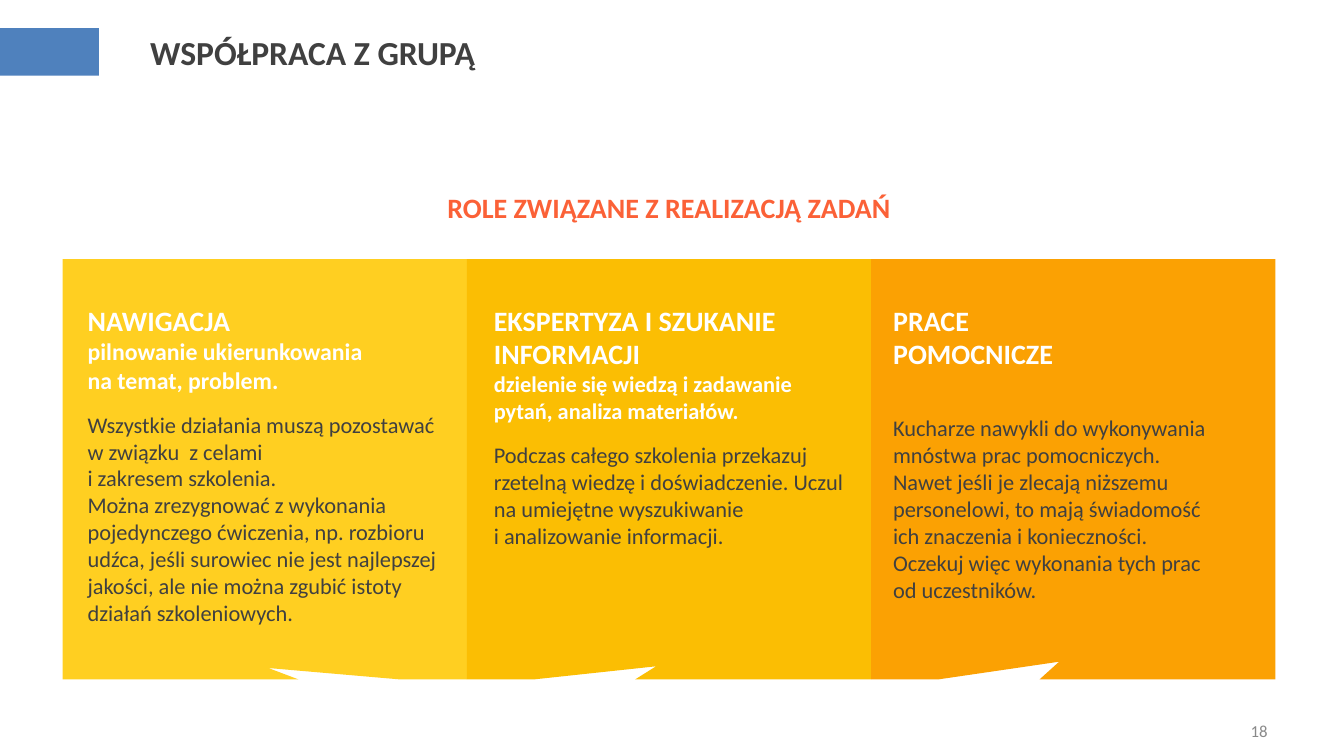
from copy import deepcopy

from pptx import Presentation
from pptx.dml.color import RGBColor
from pptx.enum.shapes import MSO_SHAPE
from pptx.enum.text import MSO_ANCHOR, PP_ALIGN
from pptx.util import Inches, Pt

CALLOUT = MSO_SHAPE.RECTANGULAR_CALLOUT
RECTANGLE = MSO_SHAPE.RECTANGLE
TOP, MIDDLE = MSO_ANCHOR.TOP, MSO_ANCHOR.MIDDLE
LEFT, CENTER, RIGHT = PP_ALIGN.LEFT, PP_ALIGN.CENTER, PP_ALIGN.RIGHT

FONT = "Calibri"
WHITE = RGBColor(0xFF, 0xFF, 0xFF)
DARK = RGBColor(0x40, 0x40, 0x40)
GRAY = RGBColor(0x89, 0x89, 0x89)
BLUE = RGBColor(0x4F, 0x81, 0xBD)
CORAL = RGBColor(0xFB, 0x61, 0x37)
YELLOW = RGBColor(0xFF, 0xCF, 0x21)
AMBER = RGBColor(0xFB, 0xBE, 0x03)
ORANGE = RGBColor(0xFB, 0xA1, 0x03)

CARDS_LEFT, CARDS_TOP = 0.62, 2.57
CARD_WIDTH, CARD_HEIGHT = 4.01, 4.17

# Each role: fill, callout tip, text inset, text width, heading,
# summary, summary size, space after the heading, description
ROLES = [
    (YELLOW, (0.009, 0.473), 0.15, 3.72, "NAWIGACJA",
     "pilnowanie ukierunkowania \nna temat, problem.", 17, 12,
     "Wszystkie działania muszą pozostawać w związku  z celami \n"
     "i zakresem szkolenia. \n"
     "Można zrezygnować z wykonania pojedynczego ćwiczenia, np. rozbioru "
     "udźca, jeśli surowiec nie jest najlepszej jakości, ale nie można "
     "zgubić istoty działań szkoleniowych."),
    (AMBER, (-0.032, 0.469), 0.17, 3.67, "EKSPERTYZA I SZUKANIE INFORMACJI",
     "dzielenie się wiedzą i zadawanie pytań, analiza materiałów.", 16, 12,
     "Podczas całego szkolenia przekazuj rzetelną wiedzę i doświadczenie. "
     "Uczul na umiejętne wyszukiwanie \ni analizowanie informacji."),
    (ORANGE, (-0.035, 0.458), 0.12, 3.77, "PRACE\nPOMOCNICZE", "", 16, 31.5,
     "Kucharze nawykli do wykonywania mnóstwa prac pomocniczych. \n"
     "Nawet jeśli je zlecają niższemu personelowi, to mają świadomość \n"
     "ich znaczenia i konieczności. \n"
     "Oczekuj więc wykonania tych prac \nod uczestników."),
]


def add_block(slide, shape_type, box, fill):
    block = slide.shapes.add_shape(shape_type, *map(Inches, box))
    block.shadow.inherit = False
    block.fill.solid()
    block.fill.fore_color.rgb = fill
    block.line.fill.background()
    return block


def add_text_box(slide, box, anchor=TOP):
    text_frame = slide.shapes.add_textbox(*map(Inches, box)).text_frame
    text_frame.word_wrap = True
    text_frame.vertical_anchor = anchor
    return text_frame


def add_lines(paragraph, text, size, color, bold):
    """Append text, with line breaks as tall as the lines they end."""
    for index, line in enumerate(text.split("\n")):
        if index:
            add_break(paragraph)
        run = paragraph.add_run()
        run.text = line
        run.font.name = FONT
        run.font.size = Pt(size)
        run.font.bold = bold
        run.font.color.rgb = color


def add_break(paragraph):
    """Break the line, keeping the format of the last run."""
    properties = deepcopy(paragraph.runs[-1]._r.rPr)
    paragraph.add_line_break()
    paragraph._p[-1].append(properties)


def add_label(slide, box, text, size, color, bold, alignment, anchor=TOP):
    paragraph = add_text_box(slide, box, anchor).paragraphs[0]
    paragraph.alignment = alignment
    add_lines(paragraph, text, size, color, bold)


def add_role_card(slide, left, top, role):
    fill, tip, inset, width, heading, summary, size, gap, description = role
    card = add_block(slide, CALLOUT, (left, top, CARD_WIDTH, CARD_HEIGHT), fill)
    card.adjustments[0], card.adjustments[1] = tip

    text_frame = add_text_box(slide, (left + inset, top + 0.39, width, 3.33))
    title = text_frame.paragraphs[0]
    title.space_after = Pt(gap)
    add_lines(title, heading, 20, WHITE, True)
    if summary:
        add_break(title)
        add_lines(title, summary, size, WHITE, True)
    add_lines(text_frame.add_paragraph(), description, 16, DARK, False)


def add_header(slide, top):
    add_block(slide, RECTANGLE, (0, top, 0.98, 0.47), BLUE)
    add_label(slide, (1.39, top - 0.07, 5.99, 0.62), "WSPÓŁPRACA Z GRUPĄ",
              24, DARK, True, LEFT, MIDDLE)


def main():
    presentation = Presentation()
    presentation.slide_width = Inches(13.33)
    presentation.slide_height = Inches(7.5)
    slide = presentation.slides.add_slide(presentation.slide_layouts[6])

    add_header(slide, 0.28)
    add_label(slide, (CARDS_LEFT, 1.84, 3 * CARD_WIDTH, 0.44),
              "ROLE ZWIĄZANE Z REALIZACJĄ ZADAŃ", 20, CORAL, True, CENTER)
    for column, role in enumerate(ROLES):
        add_role_card(slide, CARDS_LEFT + column * CARD_WIDTH, CARDS_TOP, role)
    add_label(slide, (9.56, 7.05, 3.11, 0.4), "18", 12, GRAY, False, RIGHT, MIDDLE)

    presentation.save("out.pptx")


if __name__ == "__main__":
    main()
